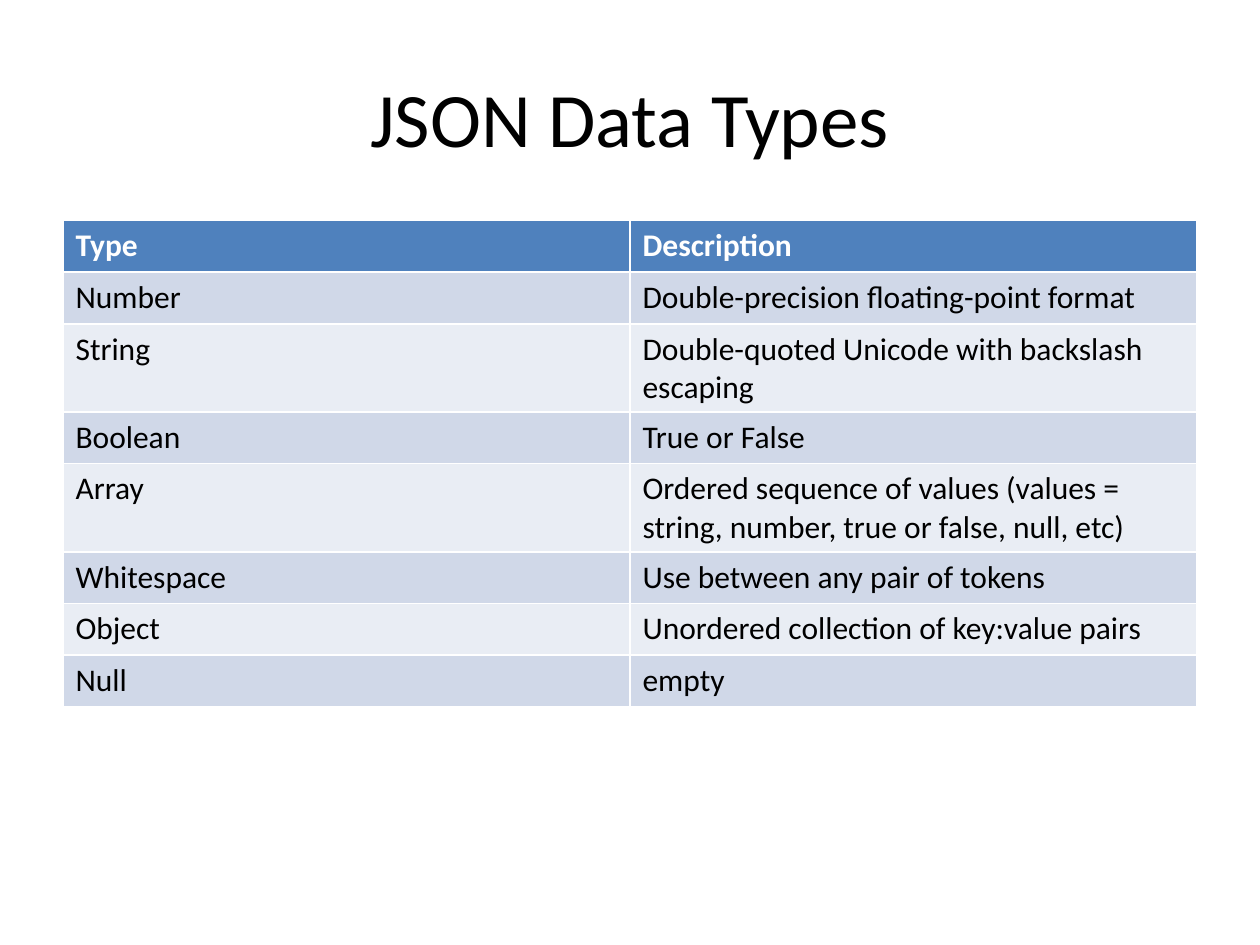
from pptx import Presentation
from pptx.dml.color import RGBColor
from pptx.enum import text
from pptx.util import Inches, Pt

TITLE = "JSON Data Types"
ROWS = [
    ("Type", "Description"),
    ("Number", "Double-precision floating-point format"),
    ("String", "Double-quoted Unicode with backslash escaping"),
    ("Boolean", "True or False"),
    ("Array", "Ordered sequence of values (values = string, number, true or false, null, etc)"),
    ("Whitespace", "Use between any pair of tokens"),
    ("Object", "Unordered collection of key:value pairs"),
    ("Null", "empty"),
]
HEADER_FILL = "4F81BD"
BAND_FILLS = ("E9EDF4", "D0D8E8")
LEFT, WIDTH = 0.5, 9
ROW_HEIGHT = 0.41


def color(value):
    return RGBColor.from_string(value)


def add_run(paragraph, content, size, font_color, bold=False):
    run = paragraph.add_run()
    run.text = content
    run.font.name = "Calibri"
    run.font.size = Pt(size)
    run.font.bold = bold
    run.font.color.rgb = color(font_color)


def add_title(slide):
    box = slide.shapes.add_textbox(Inches(LEFT), Inches(0.3), Inches(WIDTH), Inches(1.25))
    frame = box.text_frame
    frame.word_wrap = True
    frame.vertical_anchor = text.MSO_ANCHOR.MIDDLE
    paragraph = frame.paragraphs[0]
    paragraph.alignment = text.PP_ALIGN.CENTER
    add_run(paragraph, TITLE, 44, "000000")


def add_types_table(slide):
    table = slide.shapes.add_table(
        len(ROWS), len(ROWS[0]), Inches(LEFT), Inches(1.75),
        Inches(WIDTH), Inches(ROW_HEIGHT * len(ROWS)),
    ).table
    for row_index, row in enumerate(ROWS):
        header = row_index == 0
        fill = HEADER_FILL if header else BAND_FILLS[row_index % 2]
        font_color = "FFFFFF" if header else "000000"
        table.rows[row_index].height = Inches(ROW_HEIGHT)
        for column_index, content in enumerate(row):
            cell = table.cell(row_index, column_index)
            cell.fill.solid()
            cell.fill.fore_color.rgb = color(fill)
            add_run(cell.text_frame.paragraphs[0], content, 18, font_color, header)


def main():
    presentation = Presentation()
    presentation.slide_width = Inches(10)
    presentation.slide_height = Inches(7.5)
    slide = presentation.slides.add_slide(presentation.slide_layouts[6])
    add_title(slide)
    add_types_table(slide)
    presentation.save("out.pptx")


if __name__ == "__main__":
    main()
